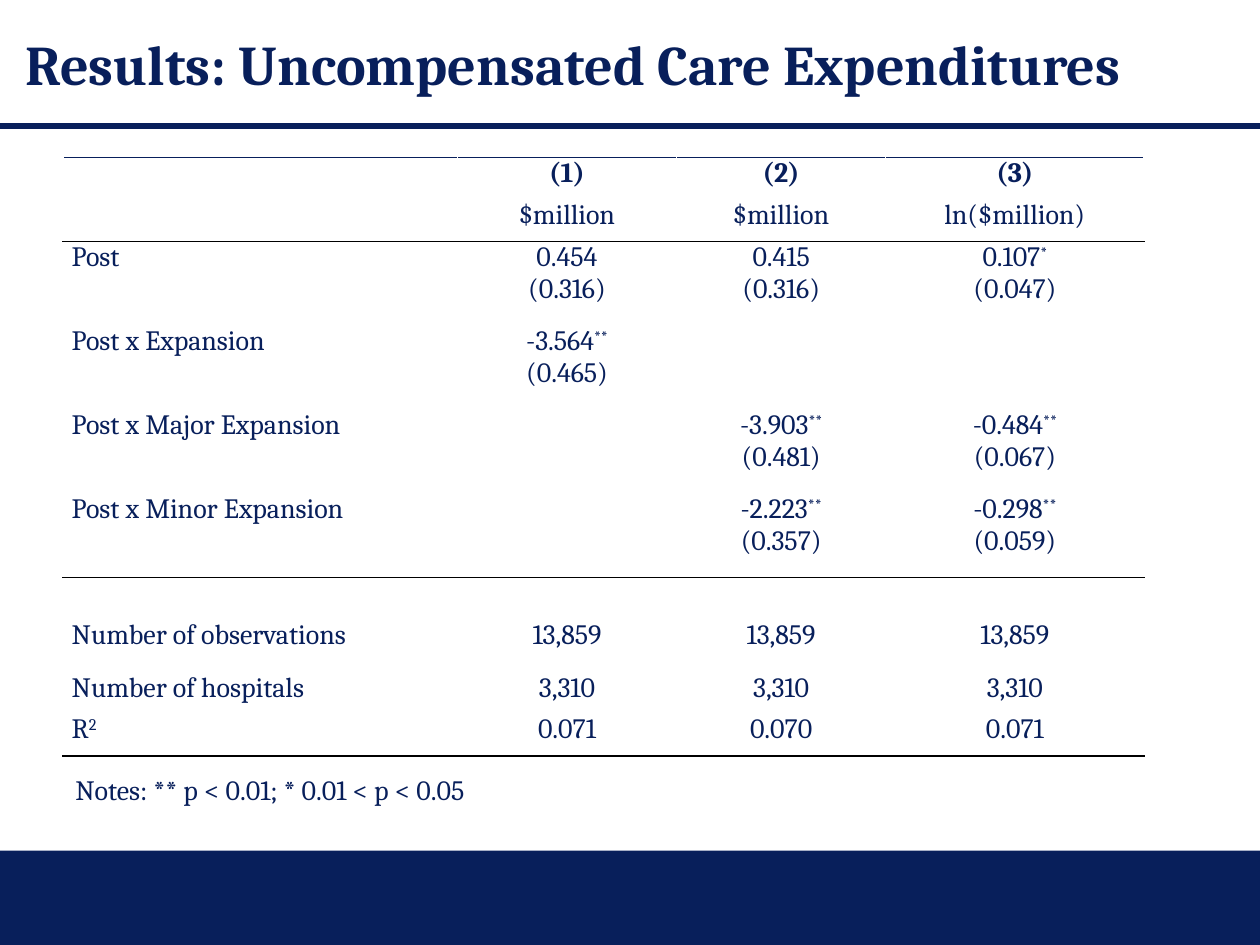
from pptx import Presentation
from pptx.dml.color import RGBColor as RGB
from pptx.enum.shapes import MSO_CONNECTOR as CONN, MSO_SHAPE as SHAPE
from pptx.enum.text import MSO_ANCHOR as ANCHOR, PP_ALIGN as ALIGN
from pptx.oxml import parse_xml
from pptx.oxml.ns import nsdecls
from pptx.util import Pt

COLORS = {"navy": "081F5B", "black": "000000", "white": "FFFFFF"}
TITLE = "Results: Uncompensated Care Expenditures"
NOTES = "Notes: ** p < 0.01; * 0.01 < p < 0.05"
ROWS = [
    ("", "(1)", "(2)", "(3)"),
    ("", "$million", "$million", "ln($million)"),
    ("Post", "0.454\n(0.316)", "0.415\n(0.316)", "0.107^*\n(0.047)"),
    ("Post x Expansion", "-3.564^**\n(0.465)", "", ""),
    ("Post x Major Expansion", "", "-3.903^**\n(0.481)", "-0.484^**\n(0.067)"),
    ("Post x Minor Expansion", "", "-2.223^**\n(0.357)", "-0.298^**\n(0.059)"),
    ("", "", "", ""),
    ("Number of observations", "13,859", "13,859", "13,859"),
    ("Number of hospitals", "3,310", "3,310", "3,310"),
    ("R^2", "0.071", "0.070", "0.071"),
]
WIDTHS = [225.36, 125.28, 119.52, 147.6]
HEIGHTS = [24, 24, 48, 48, 48, 48, 24, 30, 24, 24]
RULES = {
    0: ("lnT", "navy", 1),
    1: ("lnB", "black", 1),
    2: ("lnT", "black", 1),
    5: ("lnB", "black", 1),
    6: ("lnT", "black", 1),
    9: ("lnB", "black", 1.5),
}
CELL = {"margin_left": Pt(5), "margin_right": Pt(5), "margin_top": 0, "margin_bottom": 0,
        "vertical_anchor": ANCHOR.TOP}


def apply(obj, values):
    """Set each named attribute on an object."""
    for name, value in values.items():
        setattr(obj, name, value)


def write(p, text, size=16, bold=False, align=ALIGN.LEFT):
    """Write text in a paragraph, raising what follows a caret."""
    p.alignment = align
    for i, part in enumerate(text.split("^")):
        r = p.add_run()
        r.text = part
        apply(r.font, {"name": "Cambria", "size": Pt(size), "bold": bold})
        r.font.color.rgb = RGB.from_string(COLORS["navy"])
        if i:
            r._r.get_or_add_rPr().set("baseline", "30000")


def add_rule(cell, side, color, width):
    """Draw one border of a table cell."""
    cell._tc.get_or_add_tcPr().insert(0, parse_xml(
        f'<a:{side} {nsdecls("a")} w="{Pt(width)}"><a:solidFill>'
        f'<a:srgbClr val="{COLORS[color]}"/></a:solidFill></a:{side}>'))


def add_frame(s):
    """Add the footer band and the line below the title."""
    band = s.shapes.add_shape(SHAPE.RECTANGLE, 0, Pt(486), Pt(720), Pt(54))
    band.shadow.inherit = False
    band.fill.solid()
    band.fill.fore_color.rgb = RGB.from_string(COLORS["navy"])
    band.line.fill.background()
    line = s.shapes.add_connector(CONN.STRAIGHT, 0, Pt(72), Pt(720), Pt(72))
    line.line.width = Pt(3)
    line.line.color.rgb = RGB.from_string(COLORS["navy"])
    line._element.spPr.append(parse_xml(f'<a:effectLst {nsdecls("a")}/>'))


def add_results(s):
    """Add the table of regression results."""
    table = s.shapes.add_table(len(ROWS), len(WIDTHS), Pt(36), Pt(90),
                               Pt(sum(WIDTHS)), Pt(sum(HEIGHTS))).table
    apply(table, {"first_row": False, "horz_banding": False})
    for column, width in zip(table.columns, WIDTHS):
        column.width = Pt(width)
    for i, (row, height) in enumerate(zip(ROWS, HEIGHTS)):
        table.rows[i].height = Pt(height)
        for j, text in enumerate(row):
            cell = table.cell(i, j)
            apply(cell, CELL)
            cell.fill.solid()
            cell.fill.fore_color.rgb = RGB.from_string(COLORS["white"])
            if i in RULES:
                add_rule(cell, *RULES[i])
            if not text:
                continue
            tf = cell.text_frame
            for k, row_text in enumerate(text.split("\n")):
                p = tf.add_paragraph() if k else tf.paragraphs[0]
                write(p, row_text, bold=i == 0, align=ALIGN.CENTER if j else ALIGN.LEFT)


def main():
    """Build the slide and save it."""
    prs = Presentation()
    apply(prs, {"slide_width": Pt(720), "slide_height": Pt(540)})
    s = prs.slides.add_slide(prs.slide_layouts[5])
    add_frame(s)
    title = s.shapes.title
    apply(title, {"left": Pt(7.2), "top": 0, "width": Pt(702), "height": Pt(72)})
    apply(title.text_frame, {"vertical_anchor": ANCHOR.MIDDLE, "word_wrap": True})
    write(title.text_frame.paragraphs[0], TITLE, size=32, bold=True)
    add_results(s)
    tf = s.shapes.add_textbox(Pt(36), Pt(437.76), Pt(401.76), Pt(65.52)).text_frame
    tf.word_wrap = True
    write(tf.paragraphs[0], NOTES)
    prs.save("out.pptx")


if __name__ == "__main__":
    main()
